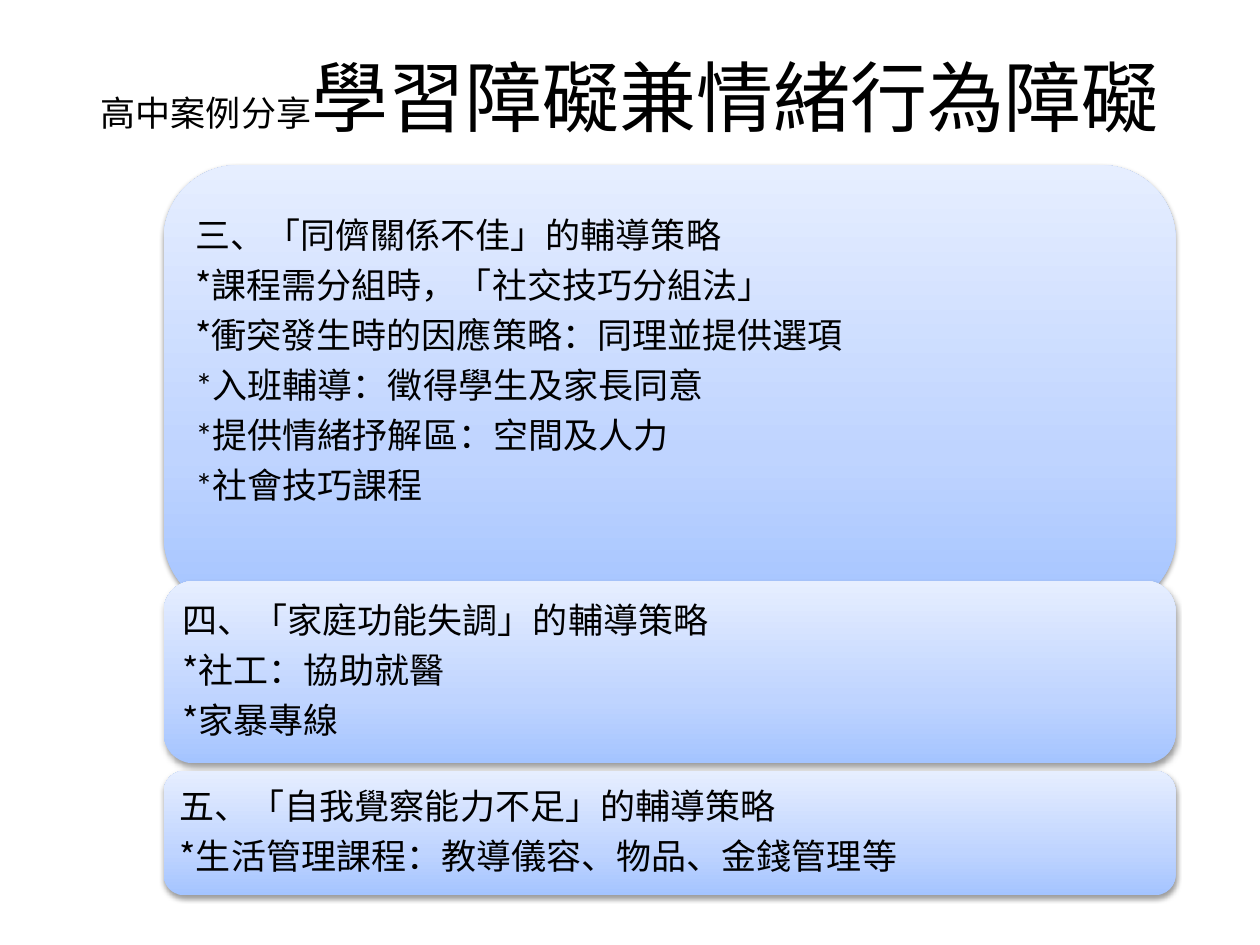
from copy import deepcopy

from lxml import etree
from pptx import Presentation
from pptx import util as u
from pptx.dml.color import RGBColor
from pptx.enum import shapes, text
from pptx.oxml.ns import qn

TC, SC, LATIN = "Noto Sans CJK TC", "Noto Sans CJK SC", "Calibri"
STOPS = [(0, "A4C4FF"), (0.35, "BFD4FF"), (1, "E6EEFF")]


def color(hex_value):
    return RGBColor.from_string(hex_value)


def add_run(paragraph, words, size, latin, east_asian):
    run = paragraph.add_run()
    run.text = words
    for name, value in {"size": u.Pt(size), "name": latin}.items():
        setattr(run.font, name, value)
    run.font.color.rgb = color("000000")
    etree.SubElement(run.font._element, qn("a:ea"), typeface=east_asian)


prs = Presentation()
prs.slide_width, prs.slide_height = u.Cm(25.4), u.Cm(19.05)
slide = prs.slides.add_slide(prs.slide_layouts[6])

# Top, height, bottom inset (cm) and lines with their Latin font
strategies = [
    (3.33, 8.97, 1.22, [
        ("三、「同儕關係不佳」的輔導策略", TC),
        ("*課程需分組時，「社交技巧分組法」", TC),
        ("*衝突發生時的因應策略：同理並提供選項", TC),
        ("*入班輔導：徵得學生及家長同意", LATIN),
        ("*提供情緒抒解區：空間及人力", LATIN),
        ("*社會技巧課程", LATIN),
    ]),
    (11.71, 3.68, 0.2, [
        ("四、「家庭功能失調」的輔導策略", TC),
        ("*社工：協助就醫", TC),
        ("*家暴專線", TC),
    ]),
    (15.54, 2.51, 0.2, [
        ("五、「自我覺察能力不足」的輔導策略", TC),
        ("*生活管理課程：教導儀容、物品、金錢管理等", TC),
    ]),
]

for top, height, bottom_inset, lines in strategies:
    panel = slide.shapes.add_shape(
        shapes.MSO_SHAPE.ROUNDED_RECTANGLE,
        u.Cm(3.3), u.Cm(top), u.Cm(20.4), u.Cm(height))
    panel.line.fill.background()

    panel.fill.gradient()
    panel.fill.gradient_angle = 90
    stop_list = panel._element.spPr.find(".//" + qn("a:gsLst"))
    stop_list.append(deepcopy(stop_list[0]))
    for stop, (position, shade) in zip(panel.fill.gradient_stops, STOPS):
        stop.position = position
        stop.color.rgb = color(shade)

    panel.shadow.inherit = False
    effects = panel._element.spPr.find(qn("a:effectLst"))
    shadow = etree.SubElement(
        effects, qn("a:outerShdw"), blurRad=str(u.Pt(3.1)),
        dist=str(u.Pt(1.6)), dir="5400000", rotWithShape="0")
    shade = etree.SubElement(shadow, qn("a:srgbClr"), val="000000")
    etree.SubElement(shade, qn("a:alpha"), val="38000")

    frame = panel.text_frame
    frame_format = {
        "margin_left": u.Cm(0.2), "margin_right": u.Cm(0.2),
        "margin_top": u.Cm(0.2), "margin_bottom": u.Cm(bottom_inset),
        "word_wrap": True, "vertical_anchor": text.MSO_ANCHOR.MIDDLE,
    }
    for name, value in frame_format.items():
        setattr(frame, name, value)

    for i, (words, latin) in enumerate(lines):
        line = frame.add_paragraph() if i else frame.paragraphs[0]
        line_format = {"alignment": text.PP_ALIGN.LEFT,
                       "line_spacing": 0.9, "space_after": u.Pt(0)}
        for name, value in line_format.items():
            setattr(line, name, value)
        # Spacing after is relative to the text size
        after = line._p.pPr.find(qn("a:spcAft"))
        after.remove(after[0])
        etree.SubElement(after, qn("a:spcPct"), val="35000")
        add_run(line, words, 20, latin, TC)

title = slide.shapes.add_textbox(u.Cm(1.27), u.Cm(0.33), u.Cm(22.86), u.Cm(3.18))
title.text_frame.word_wrap = True
title.text_frame.vertical_anchor = text.MSO_ANCHOR.MIDDLE
heading = title.text_frame.paragraphs[0]
heading.alignment = text.PP_ALIGN.CENTER
for words, size in [("高中案例分享", 20), ("學習障礙兼情緒行為障礙", 44)]:
    add_run(heading, words, size, SC, SC)

prs.save("out.pptx")
